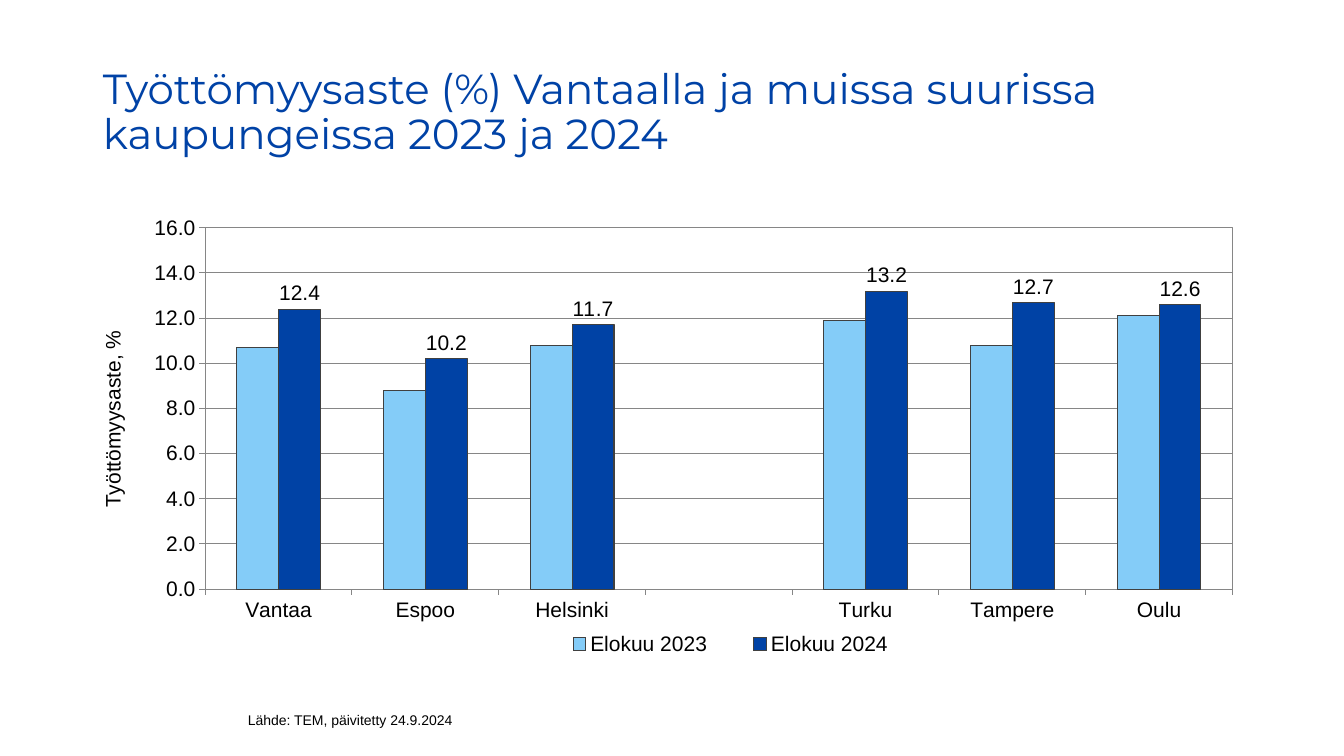
from lxml import etree
from pptx import Presentation
from pptx.chart.data import CategoryChartData as ChartData
from pptx.dml.color import RGBColor as RGB
from pptx.enum.chart import XL_CHART_TYPE as Kind, XL_LABEL_POSITION as Spot
from pptx.enum.chart import XL_LEGEND_POSITION as Side, XL_TICK_MARK as Tick
from pptx.enum.text import MSO_ANCHOR as Anchor
from pptx.oxml import parse_xml
from pptx.util import Inches, Pt

COLORS = {"title": "0042A6", "text": "000000", "grid": "868686",
          "edge": "404040", "2023": "84CCF8", "2024": "0042A5"}
CITIES = ["Vantaa", "Espoo", "Helsinki", "", "Turku", "Tampere", "Oulu"]
RATES = {"2023": [10.7, 8.8, 10.8, None, 11.9, 10.8, 12.1],
         "2024": [12.4, 10.2, 11.7, None, 13.2, 12.7, 12.6]}
NS = "http://schemas.openxmlformats.org/drawingml/2006/"


def color(name):
    return RGB.from_string(COLORS[name])


def style(font, tone, **values):
    for key, value in values.items():
        setattr(font, key, value)
    font.color.rgb = color(tone)


def outline(line, tone):
    line.color.rgb = color(tone)
    line.width = Pt(0.75)


def place(shape, box):
    for key, value in zip(("left", "top", "width", "height"), box):
        setattr(shape, key, Inches(value))


def arrange(parent, index, box, inner=False):
    """Fix a chart part at box, in fractions of the chart's size."""
    for old in parent.findall(f"{{{NS}chart}}layout"):
        parent.remove(old)
    layout = etree.Element(f"{{{NS}chart}}layout")
    manual = etree.SubElement(layout, f"{{{NS}chart}}manualLayout")
    parts = [("layoutTarget", "inner")] if inner else []
    parts += [("xMode", "edge"), ("yMode", "edge"), *zip("xywh", box)]
    for tag, value in parts:
        etree.SubElement(manual, f"{{{NS}chart}}{tag}", val=str(value))
    parent.insert(index, layout)


def add_title(slide, box):
    title = slide.shapes.title
    place(title, box)
    frame = title.text_frame
    frame.text = "Työttömyysaste (%) Vantaalla ja muissa suurissa kaupungeissa 2023 ja 2024"
    frame.word_wrap = True
    frame.vertical_anchor = Anchor.MIDDLE
    para = frame.paragraphs[0]
    para.alignment = 1
    para.line_spacing = 0.9
    style(para.font, "title", name="Montserrat", size=Pt(30))


def format_axes(chart):
    rates, cities = chart.value_axis, chart.category_axis
    scale = {"minimum_scale": 0, "maximum_scale": 16, "major_unit": 2}
    for key, value in scale.items():
        setattr(rates, key, value)
    rates.tick_labels.number_format = "0.0"
    rates.tick_labels.number_format_is_linked = False
    outline(rates.major_gridlines.format.line, "grid")
    for axis in (rates, cities):
        axis.major_tick_mark = Tick.OUTSIDE
        axis.minor_tick_mark = Tick.NONE
        outline(axis.format.line, "grid")
    frame = rates.axis_title.text_frame
    frame.text = "Työttömyysaste, %"
    frame._txBody.bodyPr.set("rot", "-5400000")
    style(frame.paragraphs[0].font, "text", name="Arial", size=Pt(15), bold=False)


def format_bars(plot):
    plot.gap_width, plot.overlap = 150, 0
    plot.vary_by_categories = False
    for bars, year in zip(plot.series, RATES):
        bars.format.fill.solid()
        bars.format.fill.fore_color.rgb = color(year)
        outline(bars.format.line, "edge")
    labels = plot.series[1].data_labels
    look = {"show_value": True, "position": Spot.OUTSIDE_END,
            "number_format": "0.0", "number_format_is_linked": False}
    for key, value in look.items():
        setattr(labels, key, value)
    style(labels.font, "text", name="Arial", size=Pt(15))


def add_rates(slide, box):
    data = ChartData(number_format="0.0")
    data.categories = CITIES
    for year, values in RATES.items():
        data.add_series(f"Elokuu {year}", values)
    chart = slide.shapes.add_chart(
        Kind.COLUMN_CLUSTERED, *map(Inches, box), data).chart
    style(chart.font, "text", name="Arial", size=Pt(15))
    chart.has_title = False
    format_axes(chart)
    format_bars(chart.plots[0])
    chart.has_legend = True
    legend = chart.legend
    legend.position = Side.BOTTOM
    legend.include_in_layout = False
    arrange(legend._element, 1, (0.38, 0.91, 0.34, 0.08))
    area = chart._chartSpace.chart.plotArea
    arrange(area, 0, (0.097, 0.044, 0.886, 0.786), inner=True)
    area.append(parse_xml(
        f'<c:spPr xmlns:c="{NS}chart" xmlns:a="{NS}main"><a:noFill/>'
        f'<a:ln w="9525"><a:solidFill><a:srgbClr val="{COLORS["grid"]}"/>'
        '</a:solidFill></a:ln></c:spPr>'))


def add_source(slide, box):
    frame = slide.shapes.add_textbox(*map(Inches, box)).text_frame
    frame.word_wrap = True
    frame.text = "Lähde: TEM, päivitetty 24.9.2024"
    style(frame.paragraphs[0].font, "text", name="Arial", size=Pt(10))


def main():
    deck = Presentation()
    deck.slide_width, deck.slide_height = Inches(13.33), Inches(7.5)
    slide = deck.slides.add_slide(deck.slide_layouts[5])
    add_title(slide, (0.92, 0.58, 11.07, 1.09))
    add_rates(slide, (0.92, 2.06, 11.5, 4.56))
    add_source(slide, (2.36, 7.01, 4.61, 0.4))
    deck.save("out.pptx")


if __name__ == "__main__":
    main()
